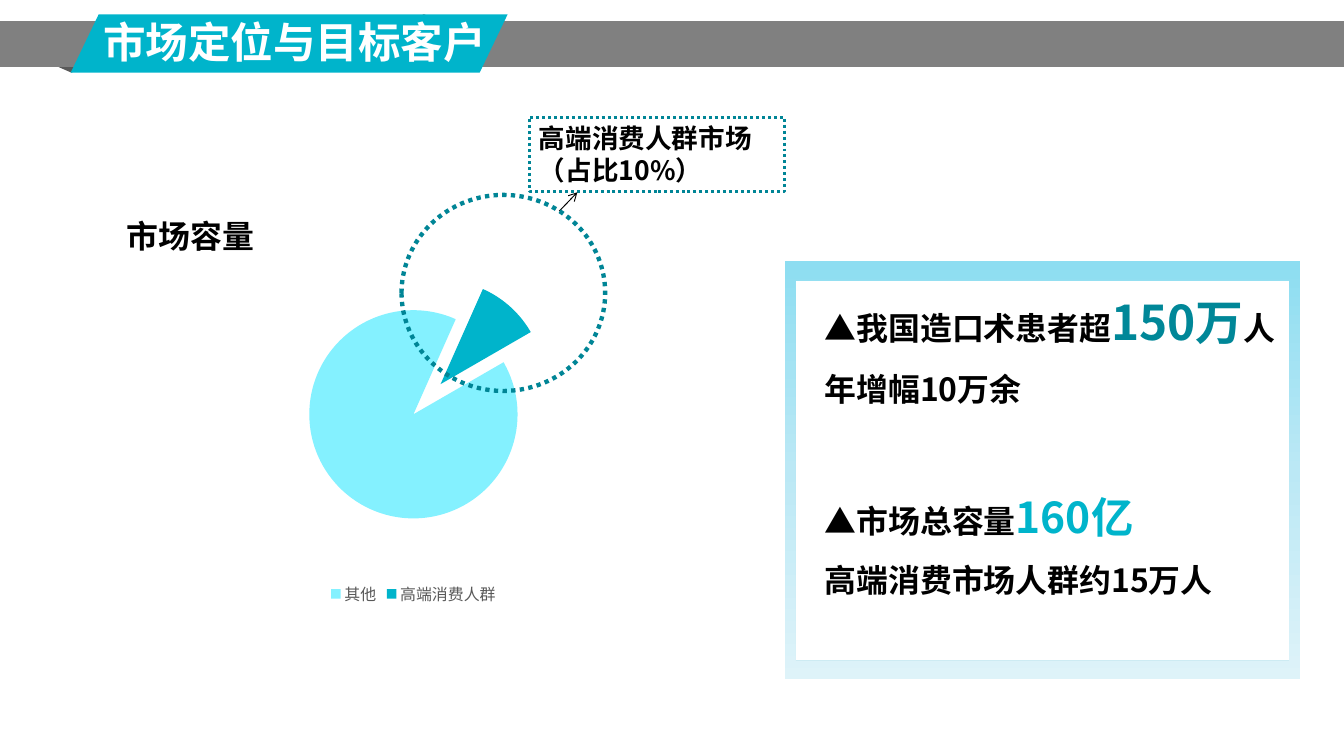
from copy import deepcopy

from lxml.etree import SubElement
from pptx import Presentation
from pptx.chart.data import CategoryChartData
from pptx.dml.color import RGBColor
from pptx.enum.chart import XL_CHART_TYPE, XL_LEGEND_POSITION
from pptx.enum.dml import MSO_LINE
from pptx.enum.shapes import MSO_CONNECTOR, MSO_SHAPE
from pptx.enum.text import MSO_ANCHOR, PP_ALIGN
from pptx.oxml.ns import qn
from pptx.util import Cm, Pt

WHITE = RGBColor(0xFF, 0xFF, 0xFF)
BLACK = RGBColor(0x00, 0x00, 0x00)
BAND_GRAY = RGBColor(0x80, 0x80, 0x80)
FOLD_GRAY = RGBColor(0x59, 0x59, 0x59)
CYAN = RGBColor(0x00, 0xB4, 0xCB)
PALE_CYAN = RGBColor(0x84, 0xF1, 0xFF)
TEAL = RGBColor(0x00, 0x85, 0x96)
DEEP_TEAL = RGBColor(0x00, 0x87, 0x98)
FRAME_STOPS = [(0, "8DDDF1"), (50, "BBE8F5"), (100, "DEF3F9")]
FONT = "Noto Sans CJK SC"


def style_font(font, size, color, bold=True, name=FONT):
    """Set size, colour, weight and typeface of a font."""
    font.size, font.bold, font.name = Pt(size), bold, name
    font.color.rgb = color


def add_plain(page, kind, left, top, width, height, fill=None):
    """Add a shape without outline or shadow, in lengths of centimetres."""
    shape = page.shapes.add_shape(kind, Cm(left), Cm(top), Cm(width), Cm(height))
    shape.shadow.inherit = False
    shape.line.fill.background()
    if fill is None:
        shape.fill.background()
    else:
        shape.fill.solid()
        shape.fill.fore_color.rgb = fill
    return shape


def dot_outline(shape, width):
    """Give a shape a dotted teal outline."""
    shape.line.color.rgb = TEAL
    shape.line.width = Pt(width)
    shape.line.dash_style = MSO_LINE.ROUND_DOT


def add_banner(page, left, top, width):
    """Draw the gray band, its folded cyan label and the title."""
    for fold_left, fold_top, turn in [(9.65, 0, 0), (0.28, 0.84, 180)]:
        fold = add_plain(page, MSO_SHAPE.ISOSCELES_TRIANGLE, left + fold_left,
                         top + fold_top, 3.23, 0.71, FOLD_GRAY)
        fold.rotation = turn
    add_plain(page, MSO_SHAPE.RECTANGLE, left, top + 0.18, width, 1.22, BAND_GRAY)
    label = add_plain(page, MSO_SHAPE.PARALLELOGRAM, left + 1.88, top, 11.61, 1.55, CYAN)
    label.adjustments[0] = 0.48

    title = page.shapes.title
    title.left, title.top = Cm(left + 2.46), Cm(top - 0.46)
    title.width, title.height = Cm(10.9), Cm(2.31)
    page.shapes.element.append(title.element)
    frame = title.text_frame
    frame.word_wrap = True
    frame.vertical_anchor = MSO_ANCHOR.TOP
    frame.margin_left = frame.margin_right = Cm(0.28)
    frame.text = "市场定位与目标客户"
    para = frame.paragraphs[0]
    para.alignment = PP_ALIGN.LEFT
    para.line_spacing = Pt(49)
    style_font(para.font, 32, WHITE, name="Arial")


def add_facts(page, left, top, width, height):
    """Write the market facts inside the gradient frame."""
    box = page.shapes.add_textbox(Cm(left + 0.81), Cm(top + 0.72),
                                  Cm(width - 0.99), Cm(height - 0.72))
    box.text_frame.word_wrap = True
    facts = [
        (0, [("▲我国造口术患者超", 24, BLACK), ("150万", 36, DEEP_TEAL), ("人", 24, BLACK)]),
        (0, [("年增幅10万余", 24, BLACK)]),
        (57, [("▲市场总容量", 24, BLACK), ("160亿", 32, CYAN)]),
        (0, [("高端消费市场人群约15万人", 24, BLACK)]),
    ]
    for index, (gap, spans) in enumerate(facts):
        para = box.text_frame.add_paragraph() if index else box.text_frame.paragraphs[0]
        para.line_spacing = Pt(43.5)
        para.space_before = Pt(gap)
        for text, size, color in spans:
            span = para.add_run()
            span.text = text
            style_font(span.font, size, color)
    add_frame(page, left, top, width, height)


def add_frame(page, left, top, width, height):
    """Draw a hollow frame filled with a vertical gradient."""
    right, bottom = left + width, top + height
    inner_left, inner_right = left + 0.29, right - 0.29
    inner_top, inner_bottom = top + 0.53, bottom - 0.49
    builder = page.shapes.build_freeform(Cm(left), Cm(top))
    builder.add_line_segments([(Cm(x), Cm(y)) for x, y in
                               [(right, top), (right, bottom), (left, bottom)]])
    builder.move_to(Cm(inner_left), Cm(inner_top))
    builder.add_line_segments([(Cm(x), Cm(y)) for x, y in
                               [(inner_left, inner_bottom), (inner_right, inner_bottom),
                                (inner_right, inner_top)]])
    frame = builder.convert_to_shape()
    frame.shadow.inherit = False
    frame.line.fill.background()
    frame.fill.gradient()
    frame.fill.gradient_angle = 270
    stops = frame.element.spPr.find(".//" + qn("a:gsLst"))
    stops.append(deepcopy(stops[0]))
    for stop, (position, color) in zip(frame.fill.gradient_stops, FRAME_STOPS):
        stop.position = position / 100
        stop.color.rgb = RGBColor.from_string(color)


def set_layout(parent, index, **values):
    """Give a chart part a manual layout in fractions of the chart."""
    for old in parent.findall(qn("c:layout")):
        parent.remove(old)
    layout = SubElement(parent, qn("c:layout"))
    parent.insert(index, layout)
    manual = SubElement(layout, qn("c:manualLayout"))
    if "w" in values:
        SubElement(manual, qn("c:layoutTarget")).set("val", "inner")
    for axis in ("x", "y"):
        SubElement(manual, qn(f"c:{axis}Mode")).set("val", "edge")
    for key, value in values.items():
        SubElement(manual, qn(f"c:{key}")).set("val", str(value))


def add_market_pie(page, left, top, width, height):
    """Chart the market share with the high-end slice pulled out."""
    data = CategoryChartData()
    data.categories = ["其他", "高端消费人群"]
    data.add_series("市场容量", (90, 10))
    chart = page.shapes.add_chart(XL_CHART_TYPE.PIE, Cm(left), Cm(top),
                                  Cm(width), Cm(height), data).chart
    style_font(chart.font, 10, BLACK, False, "Calibri")
    chart.has_title = True
    chart.chart_title.text_frame.text = "市场容量"
    style_font(chart.chart_title.text_frame.paragraphs[0].font, 24, BLACK)
    chart.has_legend = True
    chart.legend.position = XL_LEGEND_POSITION.BOTTOM
    chart.legend.include_in_layout = False
    style_font(chart.legend.font, 12, FOLD_GRAY, False)

    plot = chart.plots[0]
    plot.vary_by_categories = True
    for index, color in enumerate([PALE_CYAN, CYAN]):
        fill = plot.series[0].points[index].format.fill
        fill.solid()
        fill.fore_color.rgb = color
    area = chart.element.find(".//" + qn("c:plotArea"))
    slice_point = area.findall(".//" + qn("c:dPt"))[1]
    explosion = SubElement(slice_point, qn("c:explosion"))
    explosion.set("val", "39")
    slice_point.find(qn("c:spPr")).addprevious(explosion)
    SubElement(area.find(qn("c:pieChart")), qn("c:firstSliceAng")).set("val", "60")
    set_layout(area, 0, x=0.34, y=0.31, w=0.32, h=0.48)
    set_layout(chart.element.find(".//" + qn("c:title")), 1, x=0.06, y=0.06)


def add_callout(page, left, top, width, height):
    """Label the high-end slice and circle it."""
    note = add_plain(page, MSO_SHAPE.RECTANGLE, left, top, width, height)
    dot_outline(note, 2.25)
    note.text_frame.word_wrap = True
    note.text_frame.vertical_anchor = MSO_ANCHOR.MIDDLE
    note.text_frame.text = "高端消费人群市场（占比10%）"
    para = note.text_frame.paragraphs[0]
    para.alignment = PP_ALIGN.LEFT
    para.line_spacing = Pt(24)
    style_font(para.font, 20, BLACK)

    arrow = page.shapes.add_connector(MSO_CONNECTOR.STRAIGHT, Cm(left + 0.79), Cm(top + 2.49),
                                      Cm(left + 1.27), Cm(top + 1.99))
    arrow.line.color.rgb = BLACK
    arrow.line.width = Pt(0.75)
    outline = arrow.element.spPr.find(qn("a:ln"))
    SubElement(outline, qn("a:tailEnd")).set("type", "arrow")
    SubElement(arrow.element.spPr, qn("a:effectLst"))
    ring = add_plain(page, MSO_SHAPE.OVAL, left - 3.4, top + 2.06, 5.41, 5.21)
    dot_outline(ring, 3.25)


def main():
    """Build and save the market slide."""
    deck = Presentation()
    deck.slide_width, deck.slide_height = Cm(35.71), Cm(20.09)
    page = deck.slides.add_slide(deck.slide_layouts[5])
    add_banner(page, 0, 0.38, 35.71)
    add_market_pie(page, 2.16, 4.67, 17.65, 11.53)
    add_callout(page, 14.07, 3.12, 6.78, 1.96)
    add_facts(page, 20.85, 6.93, 13.69, 11.12)
    deck.save("out.pptx")


if __name__ == "__main__":
    main()
